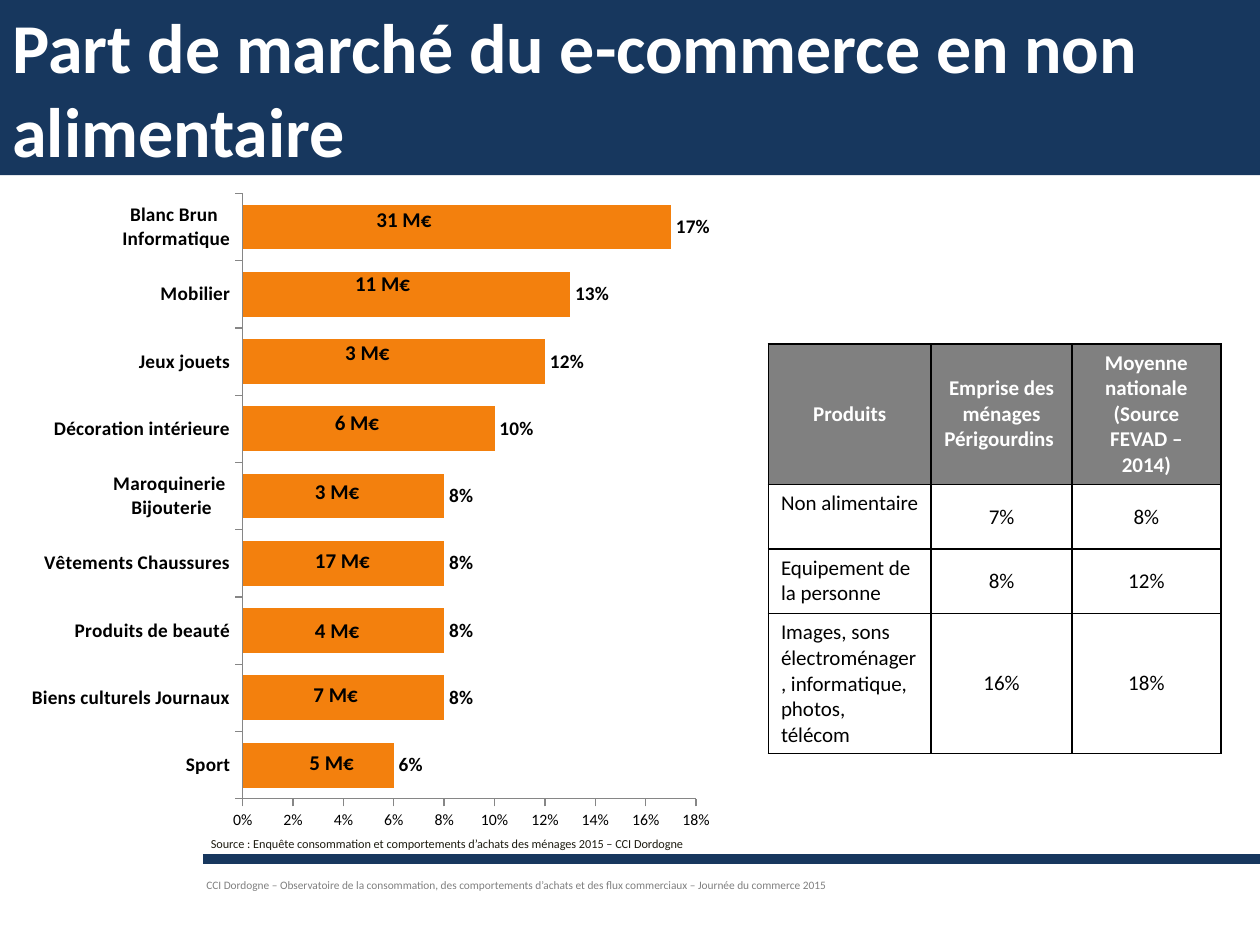
from dataclasses import dataclass

from lxml import etree
from pptx import Presentation
from pptx import util as u
from pptx.chart.data import CategoryChartData
from pptx.dml.color import RGBColor
from pptx.enum import chart as ch, shapes, text
from pptx.oxml import parse_xml
from pptx.oxml.ns import nsdecls, qn

FONT = "Calibri"
NAVY = RGBColor(0x17, 0x37, 0x5E)
ORANGE = RGBColor(0xF3, 0x80, 0x0D)
GREY = RGBColor(0x80, 0x80, 0x80)
AXIS = RGBColor(0x86, 0x86, 0x86)
INK = RGBColor(0x1E, 0x1C, 0x11)
BLACK = RGBColor(0, 0, 0)
WHITE = RGBColor(0xFF, 0xFF, 0xFF)


@dataclass
class Label:
    text: str
    left: float
    top: float
    width: float
    height: float
    size: float
    color: RGBColor = BLACK
    bold: bool = False
    anchor: text.MSO_ANCHOR = text.MSO_ANCHOR.TOP
    inset: float = 0.25
    wrap: bool = True


@dataclass
class Product:
    name: str
    share: float
    amount: str
    left: float
    top: float


PRODUCTS = [
    Product("Sport", 0.06, "5 M€", 5.99, 14.99),
    Product("Biens culturels Journaux", 0.08, "7 M€", 6.07, 13.61),
    Product("Produits de beauté", 0.08, "4 M€", 6.1, 12.32),
    Product("Vêtements Chaussures", 0.08, "17 M€", 6.1, 10.92),
    Product("Maroquinerie \nBijouterie", 0.08, "3 M€", 6.1, 9.53),
    Product("Décoration intérieure", 0.1, "6 M€", 6.5, 8.13),
    Product("Jeux jouets", 0.12, "3 M€", 6.71, 6.73),
    Product("Mobilier", 0.13, "11 M€", 6.91, 5.33),
    Product("Blanc Brun \nInformatique", 0.17, "31 M€", 7.34, 4.04),
]
ROWS = [
    ("Produits", "Emprise des ménages Périgourdins ",
     "Moyenne nationale (Source FEVAD – 2014)"),
    ("Non alimentaire", "7%", "8%"),
    ("Equipement de la personne", "8%", "12%"),
    ("Images, sons électroménager, informatique, photos, télécom",
     "16%", "18%"),
]
COL_WIDTHS = (3.28, 2.84, 3.0)
ROW_HEIGHTS = (2.84, 1.3, 1.3, 2.82)
TITLE = Label("Part de marché du e-commerce en non alimentaire", 0, 0, 25.7, 3.53,
              40, WHITE, True, text.MSO_ANCHOR.MIDDLE)
SOURCE = Label("Source : Enquête consommation et comportements d’achats des "
               "ménages 2015 – CCI Dordogne", 4.09, 16.71, 14.2, 0.61, 7, INK,
               anchor=text.MSO_ANCHOR.MIDDLE, inset=0.16)
FOOTER = Label("CCI Dordogne – Observatoire de la consommation, des comportements "
               "d’achats et des flux commerciaux – Journée du commerce 2015",
               3.91, 17.3, 19, 0.81, 6.5, GREY, anchor=text.MSO_ANCHOR.BOTTOM)


def set_font(font, size: float, color: RGBColor, bold: bool) -> None:
    font.name, font.size, font.bold = FONT, u.Pt(size), bold
    font.color.rgb = color


def add_label(s, label: Label) -> None:
    sp = s.shapes.add_textbox(u.Cm(label.left), u.Cm(label.top),
                              u.Cm(label.width), u.Cm(label.height))
    tf = sp.text_frame
    tf.word_wrap = label.wrap
    tf.vertical_anchor = label.anchor
    tf.margin_left = tf.margin_right = u.Cm(label.inset)
    p = tf.paragraphs[0]
    p.text = label.text
    set_font(p.font, label.size, label.color, label.bold)


def add_bands(s) -> None:
    sp = s.shapes.add_shape(shapes.MSO_SHAPE.RECTANGLE, u.Cm(-0.51), 0,
                            u.Cm(26.59), u.Cm(3.53))
    sp.shadow.inherit = False
    sp.fill.solid()
    sp.fill.fore_color.rgb = NAVY
    sp.line.fill.background()
    y = u.Cm(17.32)
    line = s.shapes.add_connector(shapes.MSO_CONNECTOR.STRAIGHT,
                                  u.Cm(4.09), y, u.Cm(25.4), y)
    line.line.color.rgb = NAVY
    line.line.width = u.Pt(6)
    etree.SubElement(line._element.spPr, qn("a:effectLst"))


def add_share_chart(s) -> None:
    data = CategoryChartData(number_format="0%")
    data.categories = [product.name for product in PRODUCTS]
    data.add_series("Part de marché", [product.share for product in PRODUCTS])
    chart = s.shapes.add_chart(ch.XL_CHART_TYPE.BAR_CLUSTERED, u.Cm(-0.71), u.Cm(3.73),
                               u.Cm(15.39), u.Cm(13), data).chart
    chart.has_legend = chart.has_title = False
    set_font(chart.font, 11, BLACK, False)
    plot = chart.plots[0]
    plot.gap_width = 50
    plot.vary_by_categories = False
    fill = plot.series[0].format.fill
    fill.solid()
    fill.fore_color.rgb = ORANGE
    plot.has_data_labels = True
    labels = plot.data_labels
    labels.show_value = True
    labels.number_format, labels.number_format_is_linked = "0%", False
    labels.position = ch.XL_LABEL_POSITION.OUTSIDE_END
    set_font(labels.font, 11, BLACK, True)
    for axis, size, bold in ((chart.category_axis, 11, True),
                             (chart.value_axis, 9, False)):
        axis.has_major_gridlines = False
        axis.major_tick_mark = ch.XL_TICK_MARK.OUTSIDE
        axis.format.line.color.rgb = AXIS
        set_font(axis.tick_labels.font, size, BLACK, bold)
    values = chart.value_axis
    values.minimum_scale, values.maximum_scale, values.major_unit = 0, 0.18, 0.02
    values.tick_labels.number_format = "0%"
    values.tick_labels.number_format_is_linked = False
    area = chart._chartSpace.chart.plotArea
    for old in area.findall(qn("c:layout")):
        area.remove(old)
    area.insert(0, parse_xml(
        f'<c:layout {nsdecls("c")}><c:manualLayout><c:layoutTarget val="inner"/>'
        '<c:xMode val="edge"/><c:yMode val="edge"/><c:x val="0.364"/>'
        '<c:y val="0.013"/><c:w val="0.594"/><c:h val="0.939"/>'
        '</c:manualLayout></c:layout>'))


def add_borders(cell) -> None:
    for side in ("L", "R", "T", "B"):
        cell._tc.get_or_add_tcPr().append(parse_xml(
            f'<a:ln{side} {nsdecls("a")} w="12700"><a:solidFill>'
            f'<a:srgbClr val="{BLACK}"/></a:solidFill></a:ln{side}>'))


def add_comparison_table(s) -> None:
    table = s.shapes.add_table(len(ROWS), len(COL_WIDTHS), u.Cm(15.49), u.Cm(6.93),
                               u.Cm(sum(COL_WIDTHS)), u.Cm(sum(ROW_HEIGHTS))).table
    for column, width in zip(table.columns, COL_WIDTHS):
        column.width = u.Cm(width)
    for i, (row, height) in enumerate(zip(table.rows, ROW_HEIGHTS)):
        row.height = u.Cm(height)
        header = i == 0
        for j, cell in enumerate(row.cells):
            add_borders(cell)
            cell.fill.solid()
            cell.fill.fore_color.rgb = GREY if header else WHITE
            p = cell.text_frame.paragraphs[0]
            p.text = ROWS[i][j]
            set_font(p.font, 12, WHITE if header else BLACK, header)
            if header or j > 0:
                p.alignment = text.PP_ALIGN.CENTER
                cell.vertical_anchor = text.MSO_ANCHOR.MIDDLE


def main() -> None:
    prs = Presentation()
    prs.slide_width, prs.slide_height = u.Cm(25.4), u.Cm(19.05)
    s = prs.slides.add_slide(prs.slide_layouts[6])
    add_bands(s)
    add_label(s, TITLE)
    add_share_chart(s)
    add_label(s, SOURCE)
    add_comparison_table(s)
    add_label(s, FOOTER)
    for product in reversed(PRODUCTS):
        width = 1.65 if len(product.amount) > 4 else 1.42
        add_label(s, Label(product.amount, product.left, product.top, width, 0.76,
                           12, bold=True, wrap=False))
    prs.save("out.pptx")


if __name__ == "__main__":
    main()
